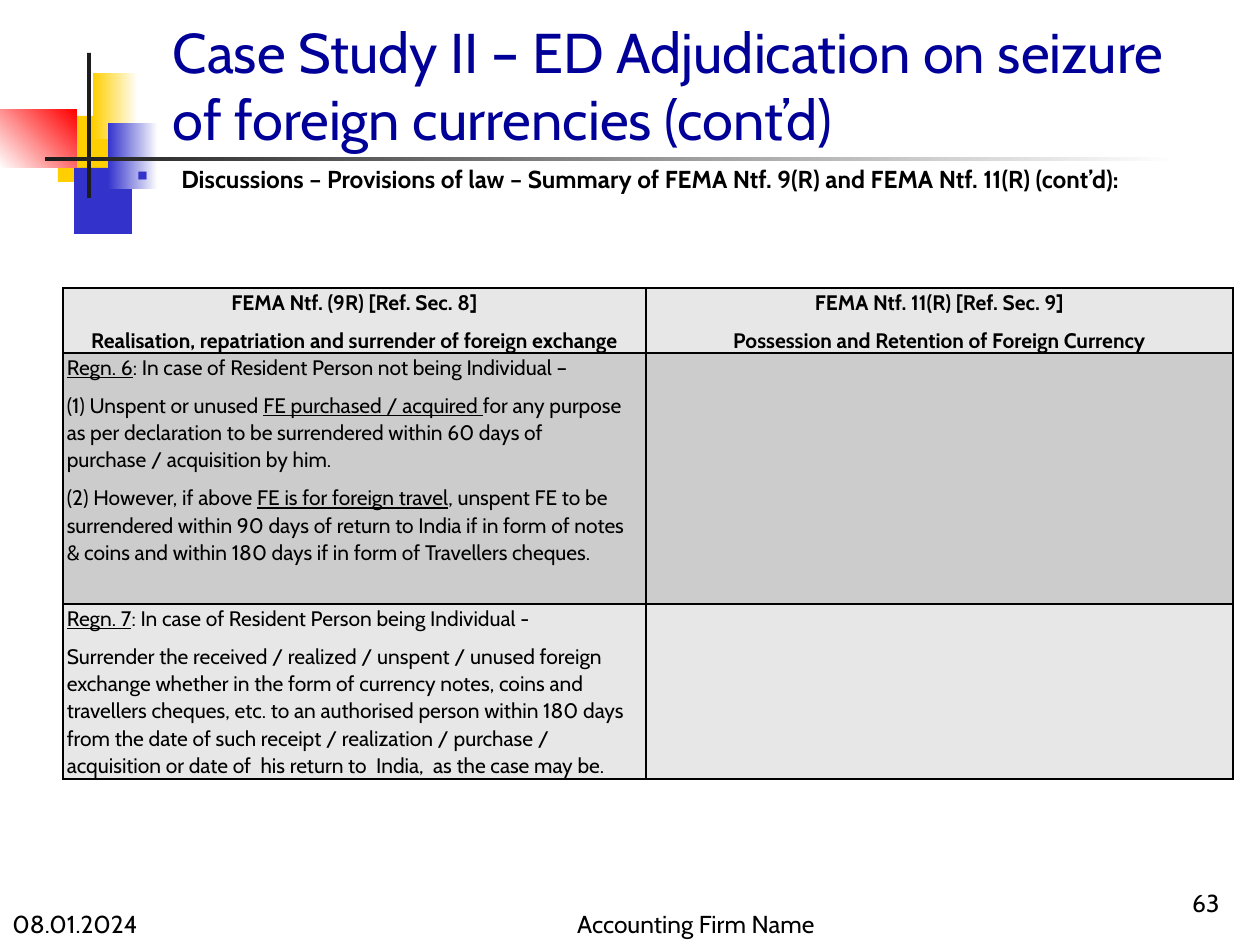
from lxml import etree
from pptx import Presentation
from pptx import util as u
from pptx.dml.color import RGBColor
from pptx.enum import shapes, text
from pptx.oxml.ns import qn

PX = 914400 / 126
FONT = "Cabin"
LEFT, MID, RIGHT, JUST = (text.PP_ALIGN.LEFT, text.PP_ALIGN.CENTER,
                          text.PP_ALIGN.RIGHT, text.PP_ALIGN.JUSTIFY)

TITLE = "Case Study II – ED Adjudication on seizure of foreign currencies (cont’d)"
LEAD = ("Discussions – Provisions of law – Summary of FEMA Ntf. 9(R) "
        "and FEMA Ntf. 11(R) (cont’d):")

# Corner motif: box, colours (two make a gradient), angle
DECOR = [
    ((58, 116, 60, 66), ["FFCF01"], 0),
    ((74, 168, 58, 66), ["3333CC"], 0),
    ((93, 73, 45, 66), ["FFCF01", "FFFFFF"], 0),
    ((108, 123, 50, 66), ["3333CC", "FFFFFF"], 0),
    ((0, 110, 77, 58), ["FFFFFF", "FF0000"], 45),
    ((87, 53, 4, 145), ["1C1C1C"], 0),
    ((45, 157, 1134, 4), ["1C1C1C", "FFFFFF"], 0),
]

FOOT = [
    ((970, 861, 262, 63), "63", RIGHT),
    ((0, 882, 262, 63), "08.01.2024", LEFT),
    ((496, 882, 400, 63), "Accounting Firm Name", MID),
]

# Table: rows of cells, cells of paragraphs, "_" marks switch underline
ROWS = [
    [["FEMA Ntf. (9R) [Ref. Sec. 8]",
      "Realisation, repatriation and surrender of foreign exchange"],
     ["FEMA Ntf. 11(R) [Ref. Sec. 9]",
      "Possession and Retention of Foreign Currency"]],
    [["_Regn. 6_: In case of Resident Person not being Individual –",
      "(1) Unspent or unused _FE purchased / acquired _for any purpose as per "
      "declaration to be surrendered within 60 days of purchase / acquisition by him.",
      "(2) However, if above _FE is for foreign travel_, unspent FE to be "
      "surrendered within 90 days of return to India if in form of notes & coins "
      "and within 180 days if in form of Travellers cheques."], []],
    [["_Regn. 7_: In case of Resident Person being Individual -",
      "Surrender the received / realized / unspent / unused foreign exchange "
      "whether in the form of currency notes, coins and travellers cheques, etc. "
      "to an authorised person within 180 days from the date of such receipt / "
      "realization / purchase / acquisition or date of  his return to  India,  "
      "as the case may be."], []],
]
COLS, TALL = [583, 587], [65, 251, 175]
FILLS = ["E7E7E7", "CCCCCC", "E7E7E7"]


def px(n):
    return u.Emu(round(n * PX))


def rgb(code):
    return RGBColor.from_string(code)


def add_run(para, words, size, color="000000", bold=False, under=False):
    run = para.add_run()
    run.text = words
    font = run.font
    font.name, font.size, font.bold, font.underline = FONT, u.Pt(size), bold, under
    font.color.rgb = rgb(color)


def add_box(slide, box, words, align, anchor, bold=False):
    frame = slide.shapes.add_textbox(*map(px, box)).text_frame
    frame.word_wrap = True
    frame.vertical_anchor = anchor
    para = frame.paragraphs[0]
    para.alignment = align
    add_run(para, words, 14, bold=bold)
    return para


def add_rect(slide, box, tones, angle):
    rect = slide.shapes.add_shape(shapes.MSO_SHAPE.RECTANGLE, *map(px, box))
    rect.shadow.inherit = False
    rect.line.fill.background()
    if len(tones) == 1:
        rect.fill.solid()
        rect.fill.fore_color.rgb = rgb(tones[0])
        return
    rect.fill.gradient()
    rect.fill.gradient_angle = angle
    for stop, tone, pos in zip(rect.fill.gradient_stops, tones, (0, 1)):
        stop.color.rgb = rgb(tone)
        stop.position = pos


def add_bullet(para, mark, color):
    props = para._p.get_or_add_pPr()
    props.set("marL", str(u.Inches(0.38)))
    props.set("indent", str(-u.Inches(0.38)))
    tone = etree.SubElement(props, qn("a:buClr"))
    etree.SubElement(tone, qn("a:srgbClr"), val=color)
    etree.SubElement(props, qn("a:buChar"), char=mark)


def add_edges(cell):
    props = cell._tc.get_or_add_tcPr()
    for spot, side in enumerate(("lnL", "lnR", "lnT", "lnB")):
        line = etree.Element(qn("a:" + side), w=str(u.Pt(1)))
        fill = etree.SubElement(line, qn("a:solidFill"))
        etree.SubElement(fill, qn("a:srgbClr"), val="000000")
        props.insert(spot, line)


def fill_cell(cell, paras, tone, head):
    cell.fill.solid()
    cell.fill.fore_color.rgb = rgb(tone)
    cell.margin_left = cell.margin_right = u.Inches(0.03)
    cell.margin_top = cell.margin_bottom = 0
    add_edges(cell)
    frame = cell.text_frame
    frame.paragraphs[0].font.size = u.Pt(12)
    for i, words in enumerate(paras):
        para = frame.add_paragraph() if i else frame.paragraphs[0]
        para.alignment = MID if head else LEFT
        para.line_spacing = 1.07
        para.space_after = u.Pt(6)
        for j, part in enumerate(words.split("_")):
            if part:
                add_run(para, part, 12, bold=head, under=j % 2 == 1)


def main():
    deck = Presentation()
    deck.slide_width, deck.slide_height = px(1260), px(945)
    slide = deck.slides.add_slide(deck.slide_layouts[5])

    for item in DECOR:
        add_rect(slide, *item)

    # Title, raised above the motif
    title = slide.shapes.title
    title.left, title.top, title.width, title.height = map(px, (160, 0, 1071, 158))
    frame = title.text_frame
    frame.vertical_anchor = text.MSO_ANCHOR.BOTTOM
    frame.auto_size = text.MSO_AUTO_SIZE.NONE
    frame.paragraphs[0].alignment = LEFT
    add_run(frame.paragraphs[0], TITLE, 32, "000099")
    slide.shapes._spTree.append(title._element)

    # Lead line
    lead = add_box(slide, (121, 158, 1051, 755), LEAD, JUST,
                   text.MSO_ANCHOR.TOP, bold=True)
    lead.space_before = lead.space_after = u.Pt(6)
    add_bullet(lead, "▪", "3333CC")

    for box, words, align in FOOT:
        add_box(slide, box, words, align, text.MSO_ANCHOR.BOTTOM)

    # Table
    table = slide.shapes.add_table(len(ROWS), len(COLS), px(63), px(288),
                                   px(sum(COLS)), px(sum(TALL))).table
    for col, wide in zip(table.columns, COLS):
        col.width = px(wide)
    for r, row in enumerate(ROWS):
        table.rows[r].height = px(TALL[r])
        for c, paras in enumerate(row):
            fill_cell(table.cell(r, c), paras, FILLS[r], r == 0)

    deck.save("out.pptx")


if __name__ == "__main__":
    main()
